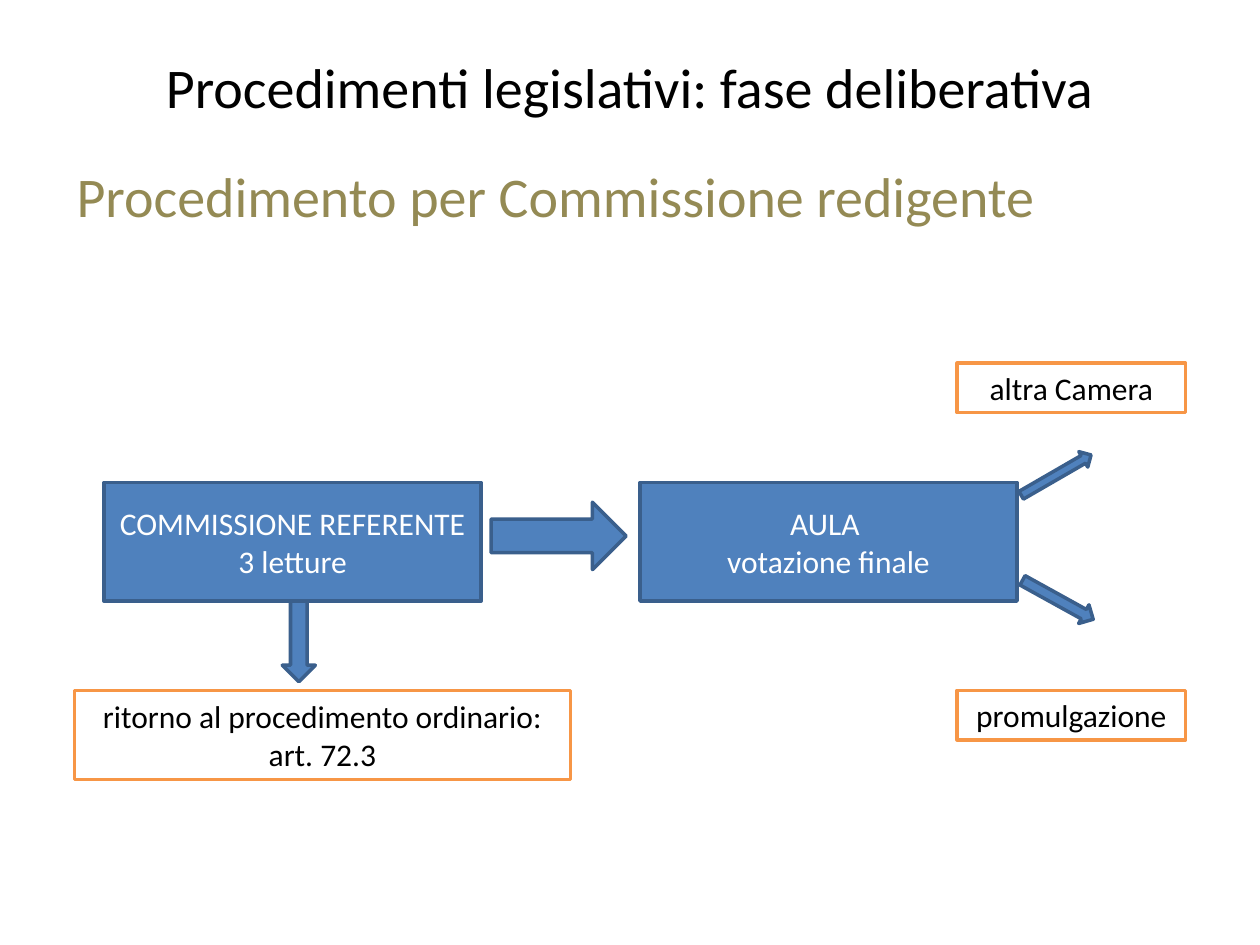
import pptx
import pptx.util
import pptx.dml.color
import pptx.enum.shapes
import pptx.enum.text

Pt = pptx.util.Pt
SHAPE = pptx.enum.shapes.MSO_SHAPE
ALIGN = pptx.enum.text.PP_ALIGN
ANCHOR = pptx.enum.text.MSO_ANCHOR

THEME = {
    "font": "Calibri", "heading_size": 32, "box_size": 18, "line_width": 2,
    "black": "000000", "white": "FFFFFF", "olive": "948A54",
    "blue": "4F81BD", "dark_blue": "3A5F8C", "orange": "F79646",
}
# Box styles: fill, line, text
STAGE = ("blue", "dark_blue", "white")
OUTCOME = ("white", "orange", "black")

# Headings: text, (left, top, width, height), colour, alignment, anchor
HEADINGS = [
    ("Procedimenti legislativi: fase deliberativa", (36, 21.6, 648, 55.4),
     "black", ALIGN.CENTER, ANCHOR.MIDDLE),
    ("Procedimento per Commissione redigente", (36.7, 88.6, 652.3, 408),
     "olive", ALIGN.LEFT, ANCHOR.TOP),
]

STAGE_TOP, STAGE_W, STAGE_H = 275.7, 215.5, 67.8
OUTCOME_LEFT, OUTCOME_W, OUTCOME_H = 547, 130.5, 28.3
RETURN_TOP = 394.5
BOXES = [
    ("COMMISSIONE REFERENTE 3 letture", (59.5, STAGE_TOP, STAGE_W, STAGE_H), STAGE),
    ("AULA \nvotazione finale", (365.7, STAGE_TOP, STAGE_W, STAGE_H), STAGE),
    ("altra Camera", (OUTCOME_LEFT, 207.5, OUTCOME_W, OUTCOME_H), OUTCOME),
    ("promulgazione", (OUTCOME_LEFT, RETURN_TOP, OUTCOME_W, OUTCOME_H), OUTCOME),
    ("ritorno al procedimento ordinario: art. 72.3",
     (42.5, RETURN_TOP, 283.5, 51), OUTCOME),
]

# Arrows: shape, (left, top, width, height), rotation
ARROWS = [
    (SHAPE.RIGHT_ARROW, (280.6, 287, 77.2, 38.5), 0),
    (SHAPE.DOWN_ARROW, (598.4, 248.4, 10.2, 46.1), 240),
    (SHAPE.DOWN_ARROW, (598.4, 319.7, 12.2, 46.1), 298.9),
    (SHAPE.DOWN_ARROW, (161.3, STAGE_TOP + STAGE_H, 18.9, 46.1), 0),
]


def color(name):
    return pptx.dml.color.RGBColor.from_string(THEME[name])


def write(sp, text, size, ink, align, anchor):
    tf = sp.text_frame
    tf.word_wrap = True
    tf.vertical_anchor = anchor
    tf.text = text
    for p in tf.paragraphs:
        p.alignment = align
        for r in p.runs:
            r.font.name = THEME["font"]
            r.font.size = Pt(THEME[size])
            r.font.color.rgb = color(ink)


def add_shape(slide, kind, frame, fill, line):
    sp = slide.shapes.add_shape(kind, *map(Pt, frame))
    sp.shadow.inherit = False
    sp.fill.solid()
    sp.fill.fore_color.rgb = color(fill)
    sp.line.color.rgb = color(line)
    sp.line.width = Pt(THEME["line_width"])
    return sp


def main():
    prs = pptx.Presentation()
    prs.slide_width, prs.slide_height = Pt(720), Pt(540)
    s = prs.slides.add_slide(prs.slide_layouts[6])

    for text, frame, ink, align, anchor in HEADINGS:
        sp = s.shapes.add_textbox(*map(Pt, frame))
        write(sp, text, "heading_size", ink, align, anchor)

    for text, frame, (fill, line, ink) in BOXES:
        sp = add_shape(s, SHAPE.RECTANGLE, frame, fill, line)
        write(sp, text, "box_size", ink, ALIGN.CENTER, ANCHOR.MIDDLE)

    for kind, frame, rotation in ARROWS:
        sp = add_shape(s, kind, frame, "blue", "dark_blue")
        sp.rotation = rotation

    prs.save("out.pptx")


if __name__ == "__main__":
    main()
